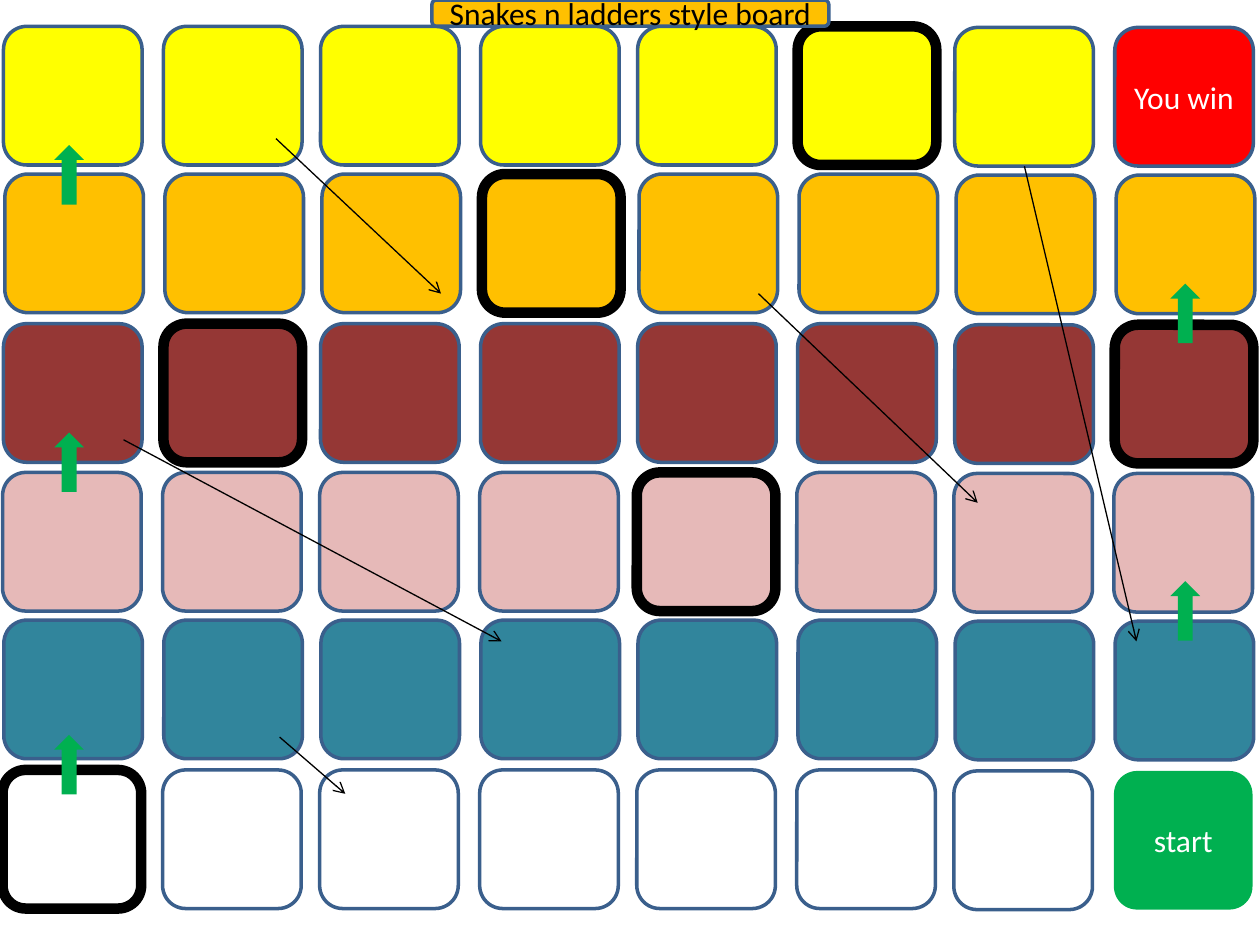
from typing import NamedTuple, Optional

from pptx import Presentation
from pptx.dml.color import RGBColor
from pptx.enum.shapes import MSO_CONNECTOR as Conn, MSO_SHAPE as Shape
from pptx.enum.text import MSO_ANCHOR as Anchor, PP_ALIGN as Align
from pptx.oxml.ns import qn
from pptx.util import Pt
from lxml.etree import SubElement

SQUARE = 79.2
PAIR_PITCH, PAIR_STEP = 181.2, 91.44  # columns come in pairs
COLUMNS = 8
BORDER, BLACK, WHITE, GREEN, AMBER = "3A5F8C", "000000", "FFFFFF", "00B050", "FFC000"
FONT = {"name": "Calibri", "size": Pt(18)}


class Row(NamedTuple):
    left: float
    top: float
    fill: str
    bold_columns: tuple[int, ...]


class Special(NamedTuple):
    text: str
    fill: str
    line: Optional[str]


class Snake(NamedTuple):
    x1: float
    y1: float
    x2: float
    y2: float


class Ladder(NamedTuple):
    left: float
    top: float


ROWS = [
    Row(2, 15.1, "FFFF00", (5,)),
    Row(2.8, 99.5, AMBER, (3,)),
    Row(2, 185, "953735", (1, 7)),
    Row(1.5, 270, "E6B9B8", (4,)),
    Row(2.2, 354.4, "31859C", ()),
    Row(1.5, 440, WHITE, (0,)),
]
SPECIALS = {
    (0, 7): Special("You win", "FF0000", BORDER),
    (5, 7): Special("start", GREEN, None),
}
SNAKES = [
    Snake(433.4, 167.8, 558.7, 287.3),
    Snake(70.6, 251.3, 286.6, 366.5),
    Snake(157.7, 79.2, 252, 167.8),
    Snake(585.4, 95, 649.4, 366.5),
    Snake(159.8, 421.2, 197.3, 453.6),
]
LADDERS = [
    Ladder(22.5, 428.4), Ladder(660.3, 340.6), Ladder(22.5, 255.6),
    Ladder(660.3, 170.6), Ladder(22.5, 91.4),
]


def rgb(value: str) -> RGBColor:
    return RGBColor.from_string(value)


def add_shape(s, kind, left: float, top: float, width: float, height: float,
              fill: str, line: Optional[str] = None, weight: float = 2):
    sp = s.shapes.add_shape(kind, Pt(left), Pt(top), Pt(width), Pt(height))
    sp.shadow.inherit = False
    sp.fill.solid()
    sp.fill.fore_color.rgb = rgb(fill)
    if line:
        sp.line.color.rgb = rgb(line)
        sp.line.width = Pt(weight)
    else:
        sp.line.fill.background()
    return sp


def write_label(sp, text: str, color: str) -> None:
    tf = sp.text_frame
    tf.vertical_anchor = Anchor.MIDDLE
    p = tf.paragraphs[0]
    p.alignment = Align.CENTER
    r = p.add_run()
    r.text = text
    for name, value in FONT.items():
        setattr(r.font, name, value)
    r.font.color.rgb = rgb(color)


def add_square(s, row_index: int, column: int) -> None:
    row = ROWS[row_index]
    pair, second = divmod(column, 2)
    left = row.left + pair * PAIR_PITCH + second * PAIR_STEP
    top = row.top + (0.6 if pair == 3 else 0)
    bold = column in row.bold_columns
    special = SPECIALS.get((row_index, column))
    fill, line = row.fill, BLACK if bold else BORDER
    if special:
        fill, line = special.fill, special.line
    sp = add_shape(s, Shape.ROUNDED_RECTANGLE, left, top, SQUARE, SQUARE,
                   fill, line, 6 if bold else 2)
    if special:
        write_label(sp, special.text, WHITE)


def add_snake(s, snake: Snake) -> None:
    cx = s.shapes.add_connector(Conn.STRAIGHT, *map(Pt, snake))
    cx.line.color.rgb = rgb(BLACK)
    cx.line.width = Pt(0.75)
    SubElement(cx.line._get_or_add_ln(), qn("a:tailEnd"), type="arrow")
    SubElement(cx._element.spPr, qn("a:effectLst"))


def add_ladder(s, ladder: Ladder) -> None:
    sp = add_shape(s, Shape.RIGHT_ARROW, ladder.left, ladder.top, 34, 17, GREEN)
    sp.rotation = 270


def main() -> None:
    prs = Presentation()
    prs.slide_width, prs.slide_height = Pt(720), Pt(540)
    s = prs.slides.add_slide(prs.slide_layouts[6])
    for row_index in range(len(ROWS)):
        for column in range(COLUMNS):
            add_square(s, row_index, column)
    for snake in SNAKES:
        add_snake(s, snake)
    for ladder in LADDERS:
        add_ladder(s, ladder)
    title = add_shape(s, Shape.ROUNDED_RECTANGLE, 246.8, 0, 226.8, 15, AMBER, BORDER)
    write_label(title, "Snakes n ladders style board", BLACK)
    prs.save("out.pptx")


if __name__ == "__main__":
    main()
